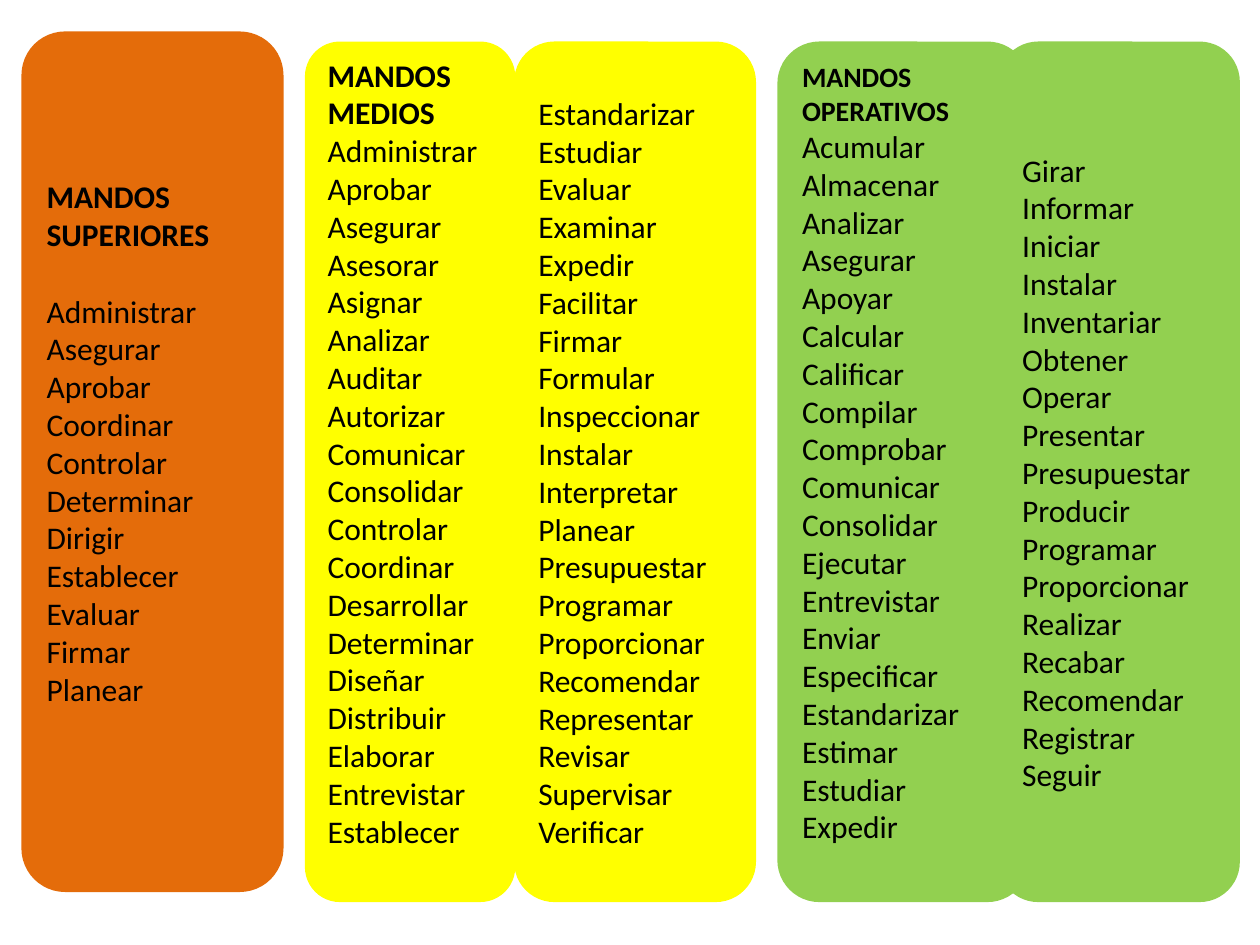
from dataclasses import dataclass
from pptx import Presentation as Deck
from pptx.dml.color import RGBColor as Color
from pptx.enum.shapes import MSO_SHAPE as Shape
from pptx.enum.text import MSO_ANCHOR as Anchor, PP_ALIGN as Align
from pptx.util import Inches, Pt


@dataclass(frozen=True)
class Theme:
    orange: str = "E46C0A"
    yellow: str = "FFFF00"
    green: str = "92D050"
    ink: str = "000000"
    font: str = "Calibri"
    body: int = 18
    small: int = 16
    line: int = 22


class Board:
    """Holds the theme and the current slide, and draws verb panels."""

    def __init__(self, slide, theme):
        self.slide = slide
        self.theme = theme

    def panel(self, left, top, width, fill, verbs, head=None, size=None, gap=0):
        box = self.slide.shapes.add_shape(
            Shape.ROUNDED_RECTANGLE,
            Inches(left), Inches(top), Inches(width), Inches(6.83))
        box.shadow.inherit = False
        box.fill.solid()
        box.fill.fore_color.rgb = Color.from_string(fill)
        box.line.fill.background()
        frame = box.text_frame
        frame.word_wrap = True
        frame.vertical_anchor = Anchor.MIDDLE
        if head:
            frame.margin_bottom = Inches(0.05) + Pt(self.theme.line)
        frame.text = "\n".join(([head] if head else []) + verbs.split())
        for item in frame.paragraphs:
            self.style(item, self.theme.body)
        if head:
            first = frame.paragraphs[0]
            self.style(first, size or self.theme.body, True)
            first.space_after = Pt(gap)

    def style(self, item, size, bold=False):
        item.alignment = Align.LEFT
        for run in item.runs:
            run.font.name = self.theme.font
            run.font.size = Pt(size)
            run.font.bold = bold
            run.font.color.rgb = Color.from_string(self.theme.ink)


TOP = """Administrar Asegurar Aprobar Coordinar Controlar Determinar
Dirigir Establecer Evaluar Firmar Planear"""
MID = """Administrar Aprobar Asegurar Asesorar Asignar Analizar Auditar
Autorizar Comunicar Consolidar Controlar Coordinar Desarrollar Determinar
Diseñar Distribuir Elaborar Entrevistar Establecer"""
MID_MORE = """Estandarizar Estudiar Evaluar Examinar Expedir Facilitar Firmar
Formular Inspeccionar Instalar Interpretar Planear Presupuestar Programar
Proporcionar Recomendar Representar Revisar Supervisar Verificar"""
LOW = """Acumular Almacenar Analizar Asegurar Apoyar Calcular Calificar
Compilar Comprobar Comunicar Consolidar Ejecutar Entrevistar Enviar
Especificar Estandarizar Estimar Estudiar Expedir"""
LOW_MORE = """Girar Informar Iniciar Instalar Inventariar Obtener Operar
Presentar Presupuestar Producir Programar Proporcionar Realizar Recabar
Recomendar Registrar Seguir"""


def main():
    deck = Deck()
    deck.slide_width, deck.slide_height = Inches(10), Inches(7.5)
    theme = Theme()
    board = Board(deck.slides.add_slide(deck.slide_layouts[6]), theme)
    board.panel(0.17, 0.25, 2.08, theme.orange, TOP, "MANDOS SUPERIORES",
                gap=theme.line)
    board.panel(2.42, 0.33, 1.67, theme.yellow, MID, "MANDOS MEDIOS")
    board.panel(4.08, 0.33, 1.92, theme.yellow, MID_MORE)
    board.panel(6.17, 0.33, 2, theme.green, LOW, "MANDOS OPERATIVOS",
                theme.small)
    board.panel(7.92, 0.33, 1.92, theme.green, LOW_MORE)
    deck.save("out.pptx")


if __name__ == "__main__":
    main()
